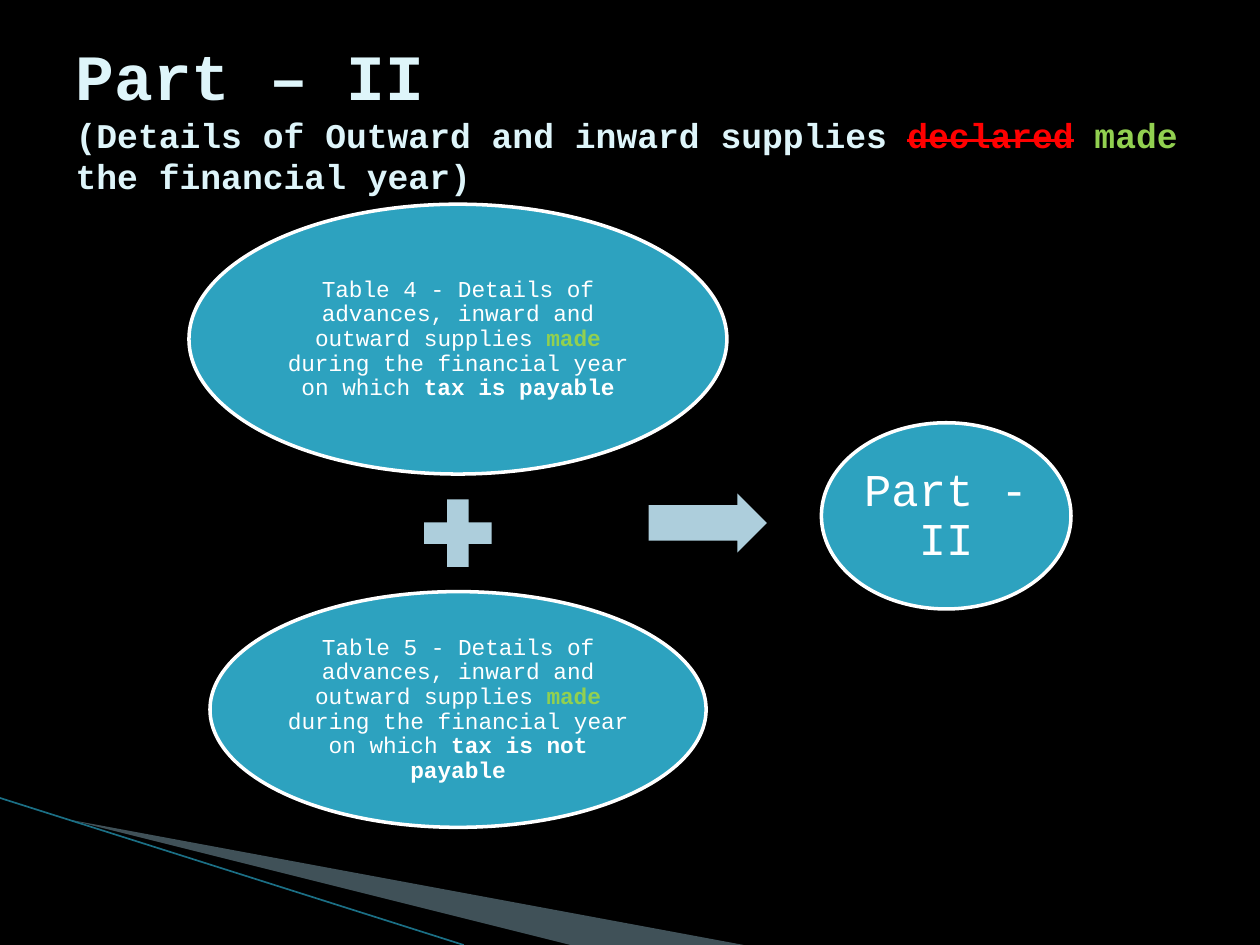
from dataclasses import dataclass

from pptx import Presentation
from pptx import util as u
from pptx.dml.color import RGBColor
from pptx.enum import shapes, text


@dataclass(frozen=True)
class Theme:
    font: str = "Courier New"
    background: str = "000000"
    heading: str = "DEF5FA"
    white: str = "FFFFFF"
    oval: str = "2DA2BF"
    operator: str = "ADCEDC"
    added: str = "92D050"
    removed: str = "FF0000"
    wedge: str = "405158"
    rule: str = "1B6F85"
    title_size: float = 36.9
    subtitle_size: float = 19.8
    table_size: float = 13
    result_size: float = 26


@dataclass(frozen=True)
class Span:
    text: str
    color: str
    bold: bool = False
    size: float | None = None
    strike: bool = False


@dataclass(frozen=True)
class Box:
    left: float
    top: float
    width: float
    height: float

    def points(self) -> tuple:
        return tuple(u.Pt(v) for v in (self.left, self.top, self.width, self.height))


@dataclass(frozen=True)
class Oval:
    box: Box
    spans: tuple
    size: float
    inset: float


THEME = Theme()


def rgb(value: str) -> RGBColor:
    return RGBColor.from_string(value)


def add_spans(paragraph, spans: tuple) -> None:
    for span in spans:
        run = paragraph.add_run()
        run.text = span.text
        run.font.color.rgb = rgb(span.color)
        run.font.bold = span.bold
        if span.size:
            run.font.size = u.Pt(span.size)
        if span.strike:
            run.font._element.set("strike", "sngStrike")


def add_filled(slide, kind, box: Box, color: str):
    shape = slide.shapes.add_shape(kind, *box.points())
    shape.shadow.inherit = False
    shape.fill.solid()
    shape.fill.fore_color.rgb = rgb(color)
    shape.line.fill.background()
    return shape


def add_oval(slide, oval: Oval) -> None:
    shape = add_filled(slide, shapes.MSO_SHAPE.OVAL, oval.box, THEME.oval)
    shape.line.color.rgb = rgb(THEME.white)
    shape.line.width = u.Pt(2)
    frame = shape.text_frame
    frame.word_wrap = True
    frame.vertical_anchor = text.MSO_ANCHOR.MIDDLE
    frame.margin_left = frame.margin_right = u.Pt(oval.inset)
    frame.margin_top = frame.margin_bottom = u.Pt(oval.inset)
    paragraph = frame.paragraphs[0]
    paragraph.alignment = text.PP_ALIGN.CENTER
    paragraph.line_spacing = 0.9
    paragraph.font.name = THEME.font
    paragraph.font.size = u.Pt(oval.size)
    add_spans(paragraph, oval.spans)


def table_spans(number: int, outcome: str) -> tuple:
    return (
        Span(f"Table {number} - Details of advances, inward and outward supplies ", THEME.white),
        Span("made", THEME.added, bold=True),
        Span(" during the financial year on which ", THEME.white),
        Span(outcome, THEME.white, bold=True),
    )


def add_corner(slide) -> None:
    # Wedge and thin rule in the lower left corner
    builder = slide.shapes.build_freeform(u.Pt(39.6), u.Pt(468.4))
    builder.add_line_segments([(u.Pt(x), u.Pt(y)) for x, y in ((425, 540), (326, 540))])
    wedge = builder.convert_to_shape()
    wedge.shadow.inherit = False
    wedge.fill.solid()
    wedge.fill.fore_color.rgb = rgb(THEME.wedge)
    wedge.line.fill.background()

    rule = slide.shapes.add_connector(
        shapes.MSO_CONNECTOR.STRAIGHT, u.Pt(0), u.Pt(456), u.Pt(265), u.Pt(540))
    rule.line.color.rgb = rgb(THEME.rule)
    rule.line.width = u.Pt(0.95)
    properties = rule._element.spPr
    properties.append(properties.makeelement(
        "{http://schemas.openxmlformats.org/drawingml/2006/main}effectLst", {}))


def add_title(slide) -> None:
    title = slide.shapes.title
    title.left, title.top, title.width, title.height = Box(36, 21.6, 648, 90).points()
    frame = title.text_frame
    frame.word_wrap = True
    frame.auto_size = text.MSO_AUTO_SIZE.NONE
    frame.vertical_anchor = text.MSO_ANCHOR.MIDDLE
    paragraph = frame.paragraphs[0]
    paragraph.alignment = text.PP_ALIGN.LEFT
    paragraph.font.name = THEME.font
    paragraph.font.size = u.Pt(THEME.subtitle_size)
    add_spans(paragraph, (Span("Part – II ", THEME.heading, True, THEME.title_size),))
    paragraph.add_line_break()
    add_spans(paragraph, (
        Span("(Details of Outward and inward supplies ", THEME.heading, True),
        Span("declared", THEME.removed, True, strike=True),
        Span(" ", THEME.heading, True),
        Span("made", THEME.added, True),
        Span(" the financial year)", THEME.heading, True),
    ))


def main() -> None:
    deck = Presentation()
    deck.slide_width, deck.slide_height = u.Pt(720), u.Pt(540)
    slide = deck.slides.add_slide(deck.slide_layouts[5])
    slide.background.fill.solid()
    slide.background.fill.fore_color.rgb = rgb(THEME.background)

    add_corner(slide)

    # Table 4 + Table 5 -> Part II
    ovals = (
        Oval(Box(108, 116.7, 307.4, 154.2), table_spans(4, "tax is payable"),
             THEME.table_size, 1.3),
        Oval(Box(120, 338.1, 283.5, 134.7), table_spans(5, "tax is not payable"),
             THEME.table_size, 1.3),
        Oval(Box(469.4, 241.6, 142.6, 106.4), (Span("Part - II", THEME.white),),
             THEME.result_size, 2.6),
    )
    for oval in ovals:
        add_oval(slide, oval)
    add_filled(slide, shapes.MSO_SHAPE.MATH_PLUS, Box(235.4, 278.4, 52.6, 52.6), THEME.operator)
    arrow = add_filled(slide, shapes.MSO_SHAPE.RIGHT_ARROW,
                       Box(370.6, 282, 67.6, 33.8), THEME.operator)
    arrow.adjustments[0] = 0.6

    add_title(slide)
    deck.save("out.pptx")


if __name__ == "__main__":
    main()
